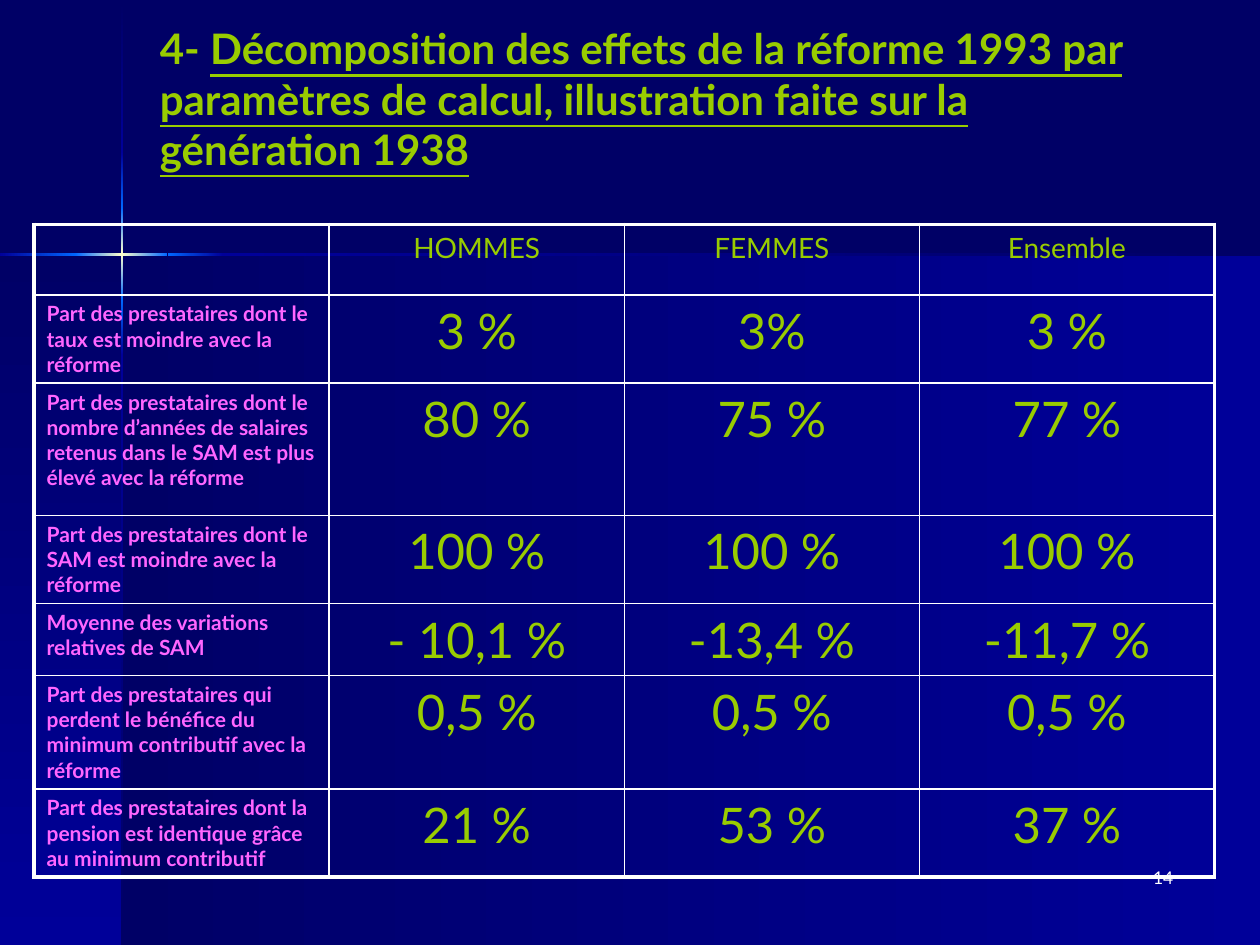
"""Build the slide on the 1993 reform: a results table over a blue, star-lit background."""
from typing import NamedTuple

from lxml import etree
from pptx import Presentation
from pptx import util as u
from pptx.dml.color import RGBColor
from pptx.enum import shapes, text
from pptx.oxml import ns

FONT = "Lato"
NAVY, BLUE, AZURE, GLOW = "000066", "000099", "0066FF", "FFFFCC"
WHITE, GREEN, PINK = "FFFFFF", "99CC00", "FF66FF"
THIN, THICK = 1, 2.25


class Band(NamedTuple):
    left: float
    top: float
    width: float
    height: float
    colors: tuple[str, ...]
    angle: int


class Result(NamedTuple):
    label: str
    values: tuple[str, str, str]
    height: float


BANDS = [
    Band(0.97, 2.02, 9.03, 5.48, (NAVY, BLUE), 0),
    Band(0, 2.02, 0.97, 5.48, (NAVY, BLUE), 90),
    Band(0.96, 0.01, 0.02, 1.2, (NAVY, BLUE), 90),
    Band(0.96, 2.82, 0.02, 4.68, (BLUE, NAVY), 90),
    Band(1.77, 2.01, 8.23, 0.02, (BLUE, NAVY), 0),
    Band(0.96, 2.38, 0.02, 0.44, (AZURE, BLUE), 90),
    Band(0.96, 1.21, 0.02, 0.44, (BLUE, AZURE), 90),
    Band(0.96, 1.65, 0.02, 0.73, (AZURE, GLOW, AZURE), 90),
    Band(0, 2.01, 0.61, 0.02, (BLUE, AZURE), 0),
    Band(1.33, 2.01, 0.44, 0.02, (AZURE, BLUE), 0),
    Band(0.6, 2.01, 0.73, 0.02, (AZURE, GLOW, AZURE), 0),
]
RESULTS = [
    Result("", ("HOMMES", "FEMMES", "Ensemble"), 0.56),
    Result("Part des prestataires dont le taux est moindre avec la réforme",
           ("3 %", "3%", "3 %"), 0.7),
    Result("Part des prestataires dont le nombre d’années de salaires retenus "
           "dans le SAM est plus élevé avec la réforme",
           ("80 %", "75 %", "77 %"), 1.05),
    Result("Part des prestataires dont le SAM est moindre avec la réforme",
           ("100 %", "100 %", "100 %"), 0.7),
    Result("Moyenne des variations relatives de SAM",
           ("- 10,1 %", "-13,4 %", "-11,7 %"), 0.57),
    Result("Part des prestataires qui perdent le bénéfice du minimum "
           "contributif avec la réforme", ("0,5 %", "0,5 %", "0,5 %"), 0.9),
    Result("Part des prestataires dont la pension est identique grâce au "
           "minimum contributif", ("21 %", "53 %", "37 %"), 0.7),
]


def rgb(color: str) -> RGBColor:
    return RGBColor.from_string(color)


def style(paragraph, size: float, color: str, bold: bool = False,
          align=text.PP_ALIGN.LEFT) -> None:
    font = paragraph.font
    font.name, font.size, font.bold = FONT, u.Pt(size), bold
    font.color.rgb = rgb(color)
    paragraph.alignment = align


def draw_band(slide, band: Band) -> None:
    shape = slide.shapes.add_shape(
        shapes.MSO_SHAPE.RECTANGLE, u.Inches(band.left), u.Inches(band.top),
        u.Inches(band.width), u.Inches(band.height))
    shape.shadow.inherit = False
    shape.line.fill.background()
    shape.fill.gradient()
    shape.fill.gradient_angle = -band.angle % 360
    stops = shape._element.spPr.find(".//" + ns.qn("a:gsLst"))
    stops.clear()
    for index, color in enumerate(band.colors):
        position = 100000 * index // (len(band.colors) - 1)
        stop = etree.SubElement(stops, ns.qn("a:gs"), pos=str(position))
        etree.SubElement(stop, ns.qn("a:srgbClr"), val=color)


def add_text_frame(slide, left: float, top: float, width: float, height: float):
    box = slide.shapes.add_textbox(
        u.Inches(left), u.Inches(top), u.Inches(width), u.Inches(height))
    box.text_frame.word_wrap = True
    return box.text_frame


def set_border(cell, side: str, width: float) -> None:
    line = etree.SubElement(cell._tc.get_or_add_tcPr(), ns.qn(f"a:ln{side}"),
                            w=str(u.Pt(width)))
    fill = etree.SubElement(line, ns.qn("a:solidFill"))
    etree.SubElement(fill, ns.qn("a:srgbClr"), val=WHITE)


def draw_table(slide, results: list[Result]) -> None:
    rows, columns = len(results), 4
    table = slide.shapes.add_table(
        rows, columns, u.Inches(0.27), u.Inches(1.78), u.Inches(9.37),
        u.Inches(sum(result.height for result in results))).table
    table.first_row = table.horz_banding = False
    for row, result in enumerate(results):
        table.rows[row].height = u.Inches(result.height)
        for column, content in enumerate((result.label, *result.values)):
            cell = table.cell(row, column)
            outer_sides = {"L": column == 0, "R": column == columns - 1,
                           "T": row == 0, "B": row == rows - 1}
            for side, is_outer in outer_sides.items():
                set_border(cell, side, THICK if is_outer else THIN)
            cell.fill.background()
            cell.text = content
            paragraph = cell.text_frame.paragraphs[0]
            if column == 0:
                style(paragraph, 12, PINK, bold=True)
            else:
                style(paragraph, 28 if row else 16, GREEN,
                      align=text.PP_ALIGN.CENTER)


def main() -> None:
    presentation = Presentation()
    presentation.slide_width, presentation.slide_height = u.Inches(10), u.Inches(7.5)
    slide = presentation.slides.add_slide(presentation.slide_layouts[6])
    slide.background.fill.solid()
    slide.background.fill.fore_color.rgb = rgb(NAVY)
    for band in BANDS:
        draw_band(slide, band)

    number = add_text_frame(slide, 7.33, 6.83, 2.08, 0.5)
    number.text = "14"
    style(number.paragraphs[0], 10, WHITE, align=text.PP_ALIGN.RIGHT)

    title = add_text_frame(slide, 1.17, 0.33, 8.25, 0.9)
    title.vertical_anchor = text.MSO_ANCHOR.MIDDLE
    heading = title.paragraphs[0]
    style(heading, 24, GREEN, bold=True)
    heading.add_run().text = "4- "
    subject = heading.add_run()
    subject.text = ("Décomposition des effets de la réforme 1993 par paramètres "
                    "de calcul, illustration faite sur la génération 1938")
    subject.font.underline = True

    draw_table(slide, RESULTS)
    presentation.save("out.pptx")


if __name__ == "__main__":
    main()
